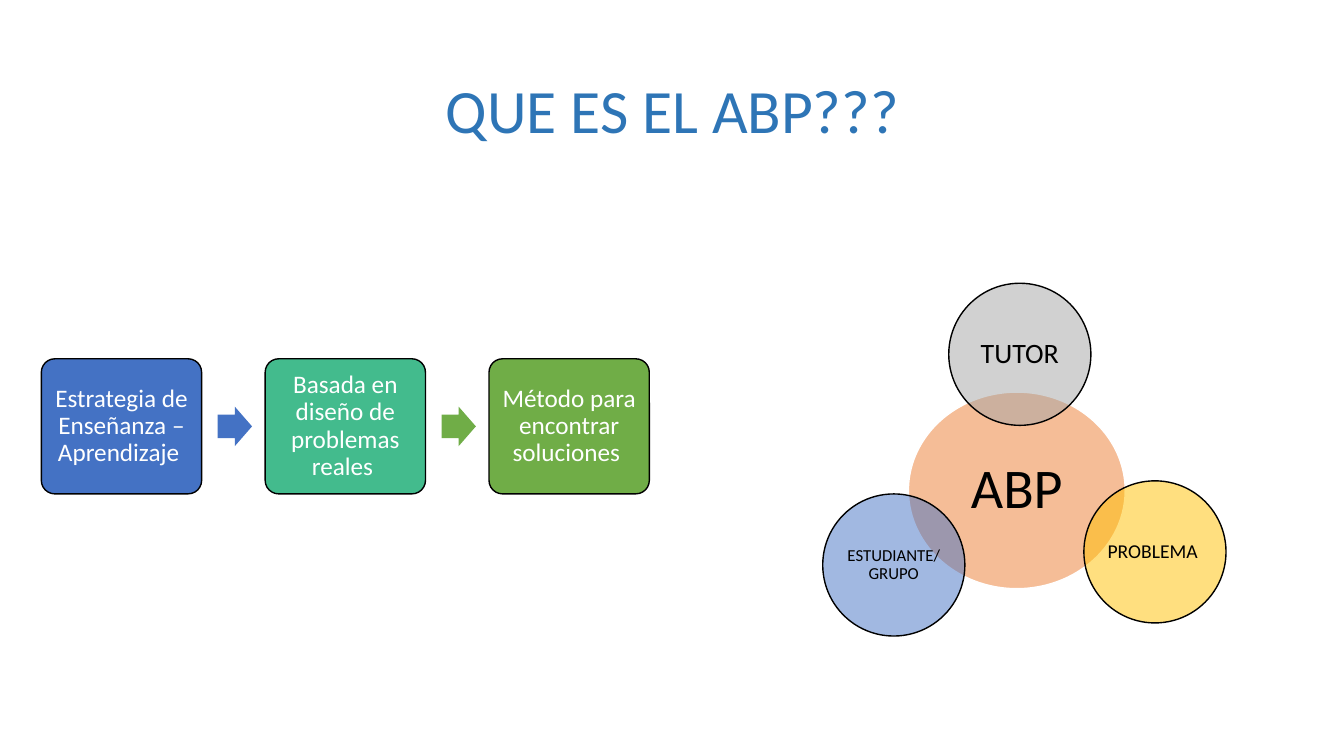
from dataclasses import dataclass

from lxml import etree
from pptx import Presentation
from pptx.dml.color import RGBColor
from pptx.enum.shapes import MSO_SHAPE
from pptx.enum.text import MSO_ANCHOR, MSO_AUTO_SIZE, PP_ALIGN
from pptx.oxml.ns import qn
from pptx.util import Inches, Pt

OVAL = MSO_SHAPE.OVAL
ROUND = MSO_SHAPE.ROUNDED_RECTANGLE
ARROW = MSO_SHAPE.RIGHT_ARROW
MIDDLE = MSO_ANCHOR.MIDDLE
CENTER = PP_ALIGN.CENTER
FIXED = MSO_AUTO_SIZE.NONE


@dataclass(frozen=True)
class Theme:
    font: str = "Calibri"
    white: str = "FFFFFF"
    black: str = "000000"
    title: str = "2E75B6"
    blue: str = "4472C4"
    teal: str = "43BB8D"
    green: str = "70AD47"
    orange: str = "ED7D31"
    gray: str = "A5A5A5"
    gold: str = "FFC000"
    head: int = 44
    hub: int = 40
    large: int = 20
    body: int = 18
    small: int = 14
    tiny: int = 12


THEME = Theme()


def write(shape, text, size, color, inset=0.1):
    frame = shape.text_frame
    frame.word_wrap = True
    frame.auto_size = FIXED
    frame.vertical_anchor = MIDDLE
    frame.margin_left = frame.margin_right = Inches(inset)
    frame.margin_top = frame.margin_bottom = Inches(inset)
    para = frame.paragraphs[0]
    para.alignment = CENTER
    para.line_spacing = 0.9
    run = para.add_run()
    run.text = text
    run.font.name = THEME.font
    run.font.size = Pt(size)
    run.font.color.rgb = RGBColor.from_string(color)


def draw(slide, kind, box, fill, line=None, alpha=None):
    shape = slide.shapes.add_shape(kind, *map(Inches, box))
    shape.shadow.inherit = False
    shape.fill.solid()
    shape.fill.fore_color.rgb = RGBColor.from_string(fill)
    if alpha:
        color = shape._element.spPr.find(qn("a:solidFill"))[0]
        etree.SubElement(color, qn("a:alpha"), val=str(alpha * 1000))
    if line:
        shape.line.color.rgb = RGBColor.from_string(line)
        shape.line.width = Pt(1)
    else:
        shape.line.fill.background()
    return shape


def add_title(slide, box, text):
    title = slide.shapes.title
    title.left, title.top, title.width, title.height = map(Inches, box)
    write(title, text, THEME.head, THEME.title)


def add_venn(slide, box):
    left, top, width, height = box
    hub = draw(slide, OVAL, (left + 0.85, top + 1.08, 2.15, 1.95),
               THEME.orange, THEME.white, 50)
    write(hub, "ABP", THEME.hub, THEME.black, 0.06)
    side = 1.41
    nodes = [
        ("TUTOR", 1.25, 0, THEME.gray, THEME.large, 0.03),
        ("PROBLEMA ", width - side, 1.96, THEME.gold, THEME.small, 0.02),
        ("ESTUDIANTE/GRUPO", 0, height - side, THEME.blue, THEME.tiny, 0.02),
    ]
    for text, dx, dy, fill, size, inset in nodes:
        node = draw(slide, OVAL, (left + dx, top + dy, side, side),
                    fill, THEME.black, 50)
        write(node, text, size, THEME.black, inset)


def add_flow(slide, box):
    left, top, width, height = box
    steps = [
        ("Estrategia de Enseñanza – Aprendizaje ", THEME.blue, THEME.blue),
        ("Basada en diseño de problemas reales ", THEME.teal, THEME.green),
        ("Método para encontrar soluciones ", THEME.green, None),
    ]
    wide = 1.59
    pitch = (width - wide) / (len(steps) - 1)
    for i, (text, fill, tip) in enumerate(steps):
        x = left + i * pitch
        step = draw(slide, ROUND, (x, top, wide, height), fill, THEME.black)
        step.adjustments[0] = 0.1
        write(step, text, THEME.body, THEME.white, 0.07)
        if tip:
            arrow = draw(slide, ARROW,
                         (x + wide + 0.16, top + (height - 0.39) / 2,
                          0.34, 0.39), tip)
            arrow.adjustments[0] = 0.6
            arrow.adjustments[1] = 0.5


def main():
    deck = Presentation()
    deck.slide_width = Inches(13.33)
    deck.slide_height = Inches(7.5)
    slide = deck.slides.add_slide(deck.slide_layouts[5])
    add_title(slide, (0.92, 0.4, 11.5, 1.45), "QUE ES EL ABP???")
    add_venn(slide, (8.16, 2.81, 4, 3.5))
    add_flow(slide, (0.41, 3.56, 6.03, 1.34))
    deck.save("out.pptx")


if __name__ == "__main__":
    main()
